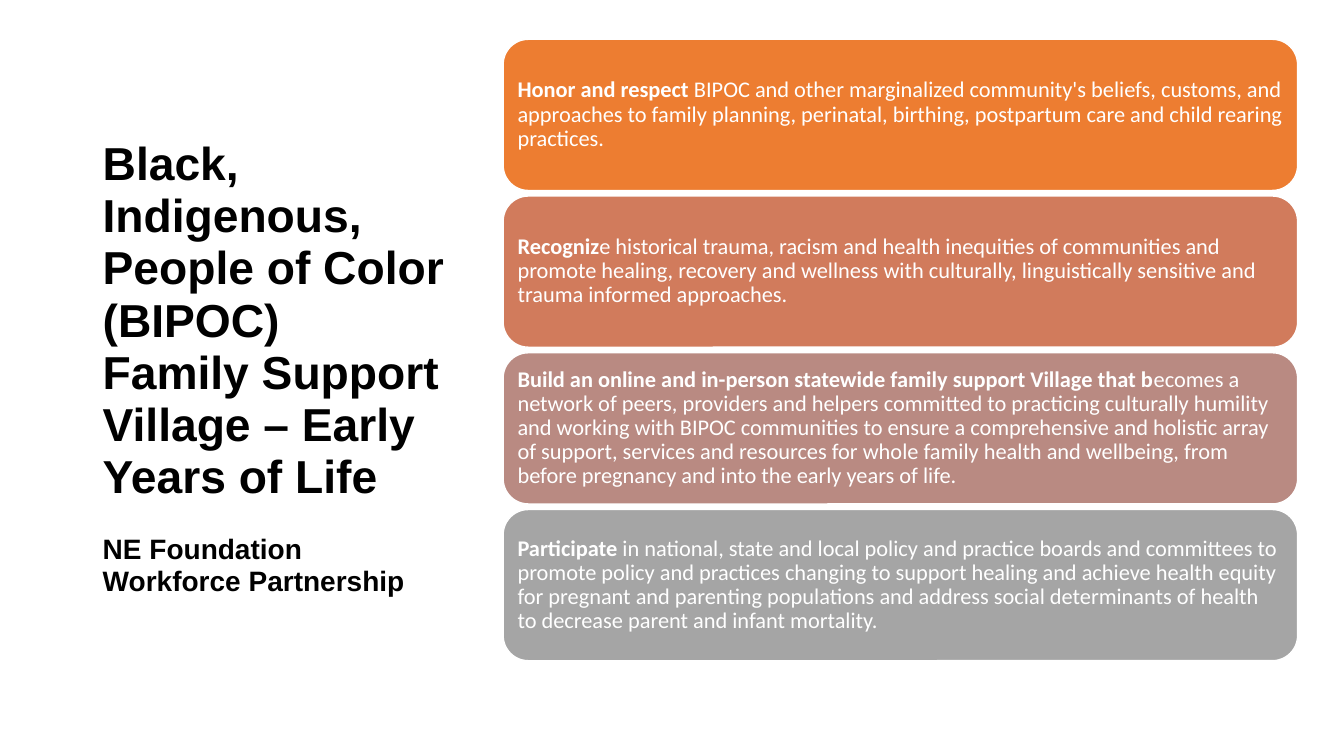
import pptx
import pptx.util
import pptx.dml.color
import pptx.enum.shapes
import pptx.enum.text

Inches = pptx.util.Inches
Pt = pptx.util.Pt
RGBColor = pptx.dml.color.RGBColor

BLACK = RGBColor(0x00, 0x00, 0x00)
WHITE = RGBColor(0xFF, 0xFF, 0xFF)
ORANGE = RGBColor(0xED, 0x7D, 0x31)
TERRACOTTA = RGBColor(0xD1, 0x7B, 0x5C)
ROSE = RGBColor(0xB9, 0x8A, 0x82)
GRAY = RGBColor(0xA5, 0xA5, 0xA5)

TITLE = [
    ("Black,\vIndigenous, People of Color (BIPOC)\v"
     "Family Support Village – Early Years of Life", 33, 0),
    ("NE Foundation\vWorkforce Partnership", 20, 22),
]

GOALS = [
    (ORANGE, "Honor and respect",
     " BIPOC and other marginalized community's beliefs, customs, and approaches "
     "to family planning, perinatal, birthing, postpartum care and child rearing practices."),
    (TERRACOTTA, "Recogniz",
     "e historical trauma, racism and health inequities of communities and promote "
     "healing, recovery and wellness with culturally, linguistically sensitive and "
     "trauma informed approaches."),
    (ROSE, "Build an online and in-person statewide family support Village that b",
     "ecomes a network of peers, providers and helpers committed to practicing "
     "culturally humility and working with BIPOC communities to ensure a comprehensive "
     "and holistic array of support, services and resources for whole family health "
     "and wellbeing, from before pregnancy and into the early years of life."),
    (GRAY, "Participate",
     " in national, state and local policy and practice boards and committees to promote "
     "policy and practices changing to support healing and achieve health equity for "
     "pregnant and parenting populations and address social determinants of health to "
     "decrease parent and infant mortality."),
]

CARD_TOP = 0.39
CARD_STEP = 1.555


class SlideBuilder:
    title_font = "Arial"
    body_font = "Calibri"
    body_size = 16
    card_inset = Inches(0.07)

    def __init__(self, slide):
        self.slide = slide

    def style_run(self, run, name, size, color, bold):
        run.font.name = name
        run.font.size = Pt(size)
        run.font.color.rgb = color
        run.font.bold = bold

    def title(self, left, top, width, height, parts):
        shape = self.slide.shapes.add_textbox(
            Inches(left), Inches(top), Inches(width), Inches(height))
        text_frame = shape.text_frame
        text_frame.word_wrap = True
        text_frame.vertical_anchor = pptx.enum.text.MSO_ANCHOR.MIDDLE
        text_frame.text = "\n".join(text for text, size, gap in parts)
        for paragraph, (text, size, gap) in zip(text_frame.paragraphs, parts):
            paragraph.line_spacing = 0.94
            paragraph.space_before = Pt(gap)
            for run in paragraph.runs:
                self.style_run(run, self.title_font, size, BLACK, True)

    def card(self, left, top, width, height, color, lead, detail):
        shape = self.slide.shapes.add_shape(
            pptx.enum.shapes.MSO_SHAPE.ROUNDED_RECTANGLE,
            Inches(left), Inches(top), Inches(width), Inches(height))
        shape.shadow.inherit = False
        shape.fill.solid()
        shape.fill.fore_color.rgb = color
        shape.line.color.rgb = WHITE
        shape.line.width = Pt(1)
        text_frame = shape.text_frame
        text_frame.word_wrap = True
        text_frame.vertical_anchor = pptx.enum.text.MSO_ANCHOR.MIDDLE
        text_frame.margin_left = text_frame.margin_right = self.card_inset
        text_frame.margin_top = text_frame.margin_bottom = self.card_inset
        paragraph = text_frame.paragraphs[0]
        paragraph.alignment = pptx.enum.text.PP_ALIGN.LEFT
        paragraph.line_spacing = 0.9
        for text, bold in ((lead, True), (detail, False)):
            run = paragraph.add_run()
            run.text = text
            self.style_run(run, self.body_font, self.body_size, WHITE, bold)


def main():
    presentation = pptx.Presentation()
    presentation.slide_width = Inches(13.33)
    presentation.slide_height = Inches(7.5)
    builder = SlideBuilder(presentation.slides.add_slide(presentation.slide_layouts[6]))
    builder.title(0.92, 0.61, 3.69, 6.09, TITLE)
    for index, (color, lead, detail) in enumerate(GOALS):
        builder.card(4.99, CARD_TOP + index * CARD_STEP, 7.88, 1.5, color, lead, detail)
    presentation.save("out.pptx")


if __name__ == "__main__":
    main()
